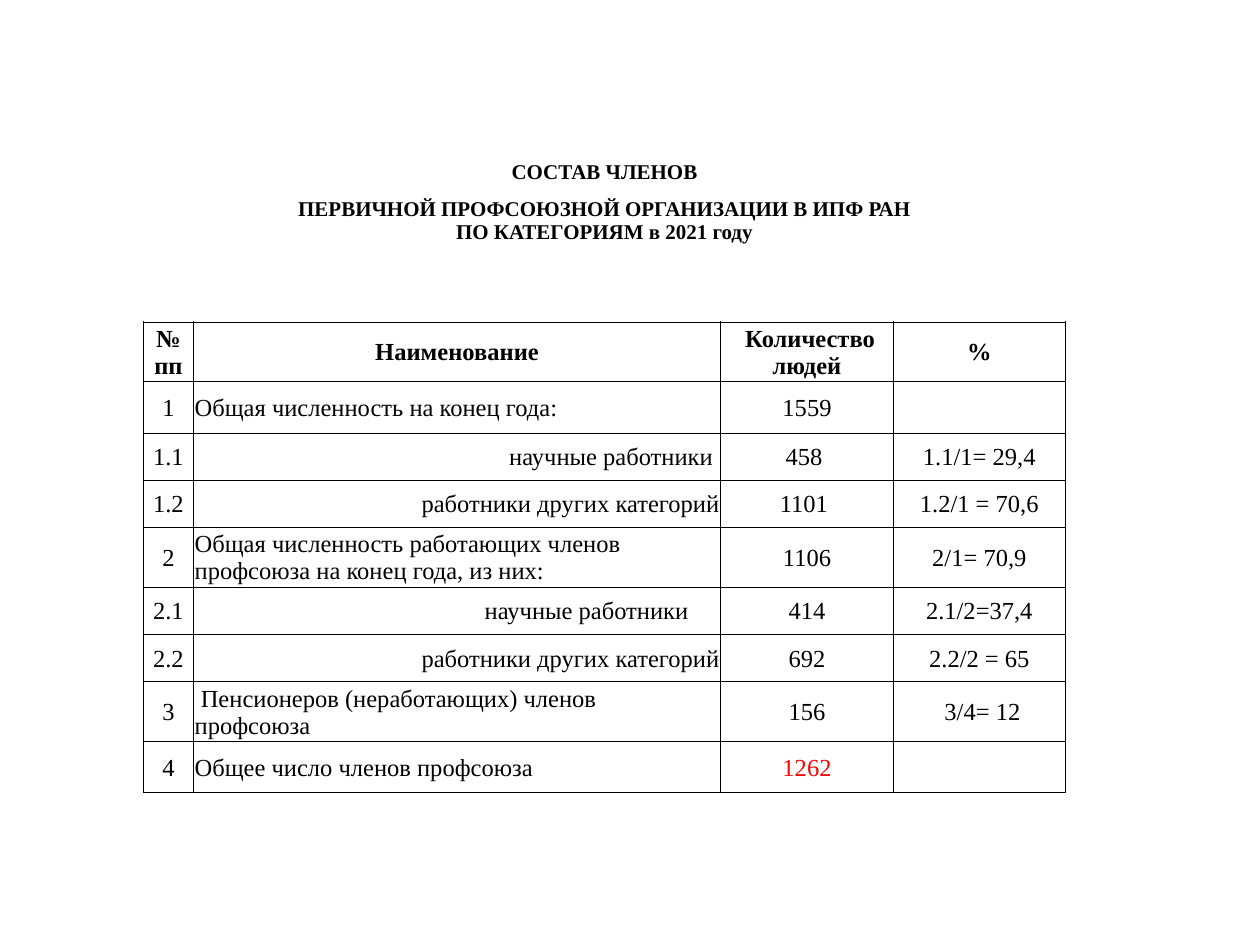
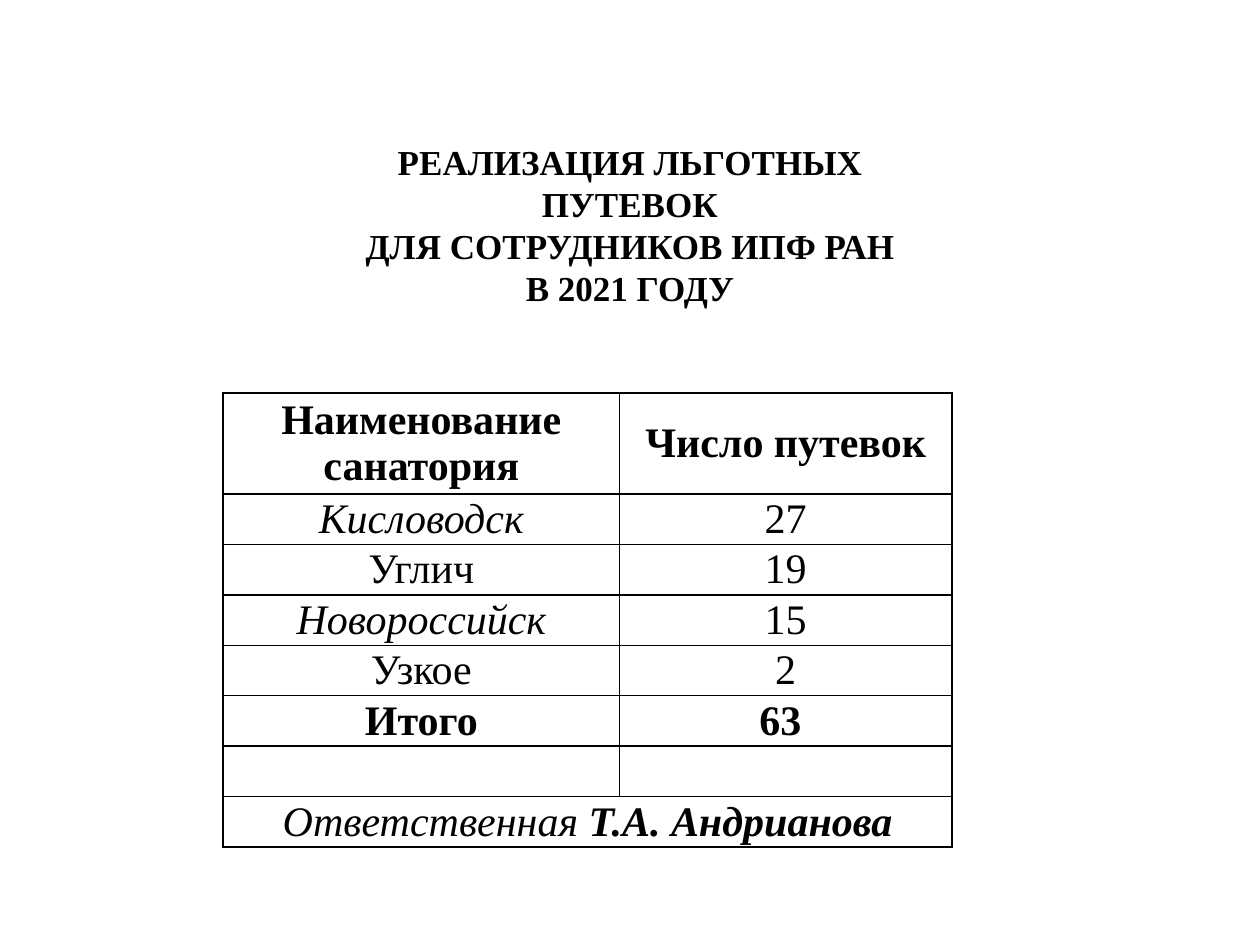
"""Build two slides of trade union tables: membership by category and discounted vouchers."""
from lxml import etree
from pptx import Presentation
from pptx.dml.color import RGBColor
from pptx.enum import text
from pptx.oxml.ns import qn
from pptx.util import Pt

FONT = "Times New Roman"
BLACK = RGBColor(0, 0, 0)
RED = RGBColor(255, 0, 0)
LEFT, CENTER, RIGHT = text.PP_ALIGN.LEFT, text.PP_ALIGN.CENTER, text.PP_ALIGN.RIGHT
MIDDLE, BOTTOM = text.MSO_ANCHOR.MIDDLE, text.MSO_ANCHOR.BOTTOM

MEMBERS_TITLE = [
    "СОСТАВ ЧЛЕНОВ",
    "ПЕРВИЧНОЙ ПРОФСОЮЗНОЙ ОРГАНИЗАЦИИ В ИПФ РАН\nПО КАТЕГОРИЯМ в 2021 году",
]
MEMBERS_HEADER = ("№\nпп", "Наименование", " Количество людей", "%")
MEMBERS = [
    ("1", "Общая численность на конец года:", "1559", ""),
    ("1.1", "научные работники", "458 ", "1.1/1= 29,4"),
    ("1.2", "работники других категорий", "1101 ", "1.2/1 = 70,6"),
    ("2", "Общая численность работающих членов профсоюза на конец года, из них:",
     "1106", "2/1= 70,9"),
    ("2.1", "научные работники", "414", "2.1/2=37,4"),
    ("2.2", "работники других категорий", "692", "2.2/2 = 65"),
    ("3", " Пенсионеров (неработающих) членов\vпрофсоюза", "156", " 3/4= 12"),
    ("4", "Общее число членов профсоюза", "1262", ""),
]
MEMBERS_COLUMNS = (28.5, 54.5, 49, 49, 149, 98.5, 98.5)
FIELD_SPANS = ((0, 0), (1, 4), (5, 5), (6, 6))
TITLE_ROWS = (39, 34.5, 44.5)
TALL_ROW, LOW_ROW = 34.25, 27
NAME_RIGHT_MARGINS = {"1.1": 4.5, "2.1": 18.5}

VOUCHERS_TITLE = "РЕАЛИЗАЦИЯ ЛЬГОТНЫХ ПУТЕВОК\nДЛЯ СОТРУДНИКОВ ИПФ РАН\nВ 2021 ГОДУ"
VOUCHERS_HEADER = ("Наименование\vсанатория", "Число путевок")
VOUCHERS = [("Кисловодск", "27"), ("Углич", "19"), ("Новороссийск", "15"), ("Узкое", "2")]
ITALIC_RESORTS = {"Кисловодск", "Новороссийск"}
VOUCHERS_TOTAL = ("Итого", "63 ")
RESPONSIBLE = ("Ответственная ", "Т.А. Андрианова")
VOUCHERS_COLUMNS = (226.5, 190)
VOUCHERS_ROWS = [57.75] + [28.85] * 7


def format_text(frame, size, bold=False, italic=False, color=BLACK, align=CENTER):
    for paragraph in frame.paragraphs:
        paragraph.alignment = align
        for run in paragraph.runs:
            font = run.font
            font.name, font.size = FONT, Pt(size)
            font.bold, font.italic = bold, italic
            font.color.rgb = color


def set_borders(cell, width):
    properties = cell._tc.get_or_add_tcPr()
    for side in ("a:lnL", "a:lnR", "a:lnT", "a:lnB"):
        line = etree.SubElement(properties, qn(side), w=str(Pt(width)))
        if width:
            fill = etree.SubElement(line, qn("a:solidFill"))
            etree.SubElement(fill, qn("a:srgbClr"), val=str(BLACK))
        else:
            etree.SubElement(line, qn("a:noFill"))


def add_grid(slide, left, top, columns, rows, border, borderless_rows=0):
    shape = slide.shapes.add_table(len(rows), len(columns), Pt(left), Pt(top),
                                   Pt(sum(columns)), Pt(sum(rows)))
    table = shape.table
    table.first_row = table.horz_banding = False
    for column, width in zip(table.columns, columns):
        column.width = Pt(width)
    for index, (row, height) in enumerate(zip(table.rows, rows)):
        row.height = Pt(height)
        for cell in row.cells:
            set_borders(cell, border if index >= borderless_rows else 0)
            cell.fill.background()
    return table


def fill_cell(cell, content, size, side_margin, top_margin=0, anchor=MIDDLE, **style):
    if not content:
        return
    cell.margin_left = cell.margin_right = Pt(side_margin)
    cell.margin_top, cell.margin_bottom = Pt(top_margin), Pt(0)
    cell.vertical_anchor = anchor
    cell.text_frame.text = content
    format_text(cell.text_frame, size, **style)


def name_alignment(number):
    return RIGHT if "." in number else LEFT


def add_members_slide(presentation):
    slide = presentation.slides.add_slide(presentation.slide_layouts[6])
    tall_names = {"2", "3"}
    body_rows = [TALL_ROW if record[0] in tall_names else LOW_ROW for record in MEMBERS]
    table = add_grid(slide, 82, 66, MEMBERS_COLUMNS, [*TITLE_ROWS, TALL_ROW, *body_rows],
                     0.5, len(TITLE_ROWS))
    for row, title in enumerate(MEMBERS_TITLE):
        table.cell(row, 0).merge(table.cell(row, len(MEMBERS_COLUMNS) - 1))
        fill_cell(table.cell(row, 0), title, 12, 0.75, 0.75, BOTTOM, bold=True)
    for row, record in enumerate([MEMBERS_HEADER, *MEMBERS], len(TITLE_ROWS)):
        header = record is MEMBERS_HEADER
        for field, ((first, last), content) in enumerate(zip(FIELD_SPANS, record)):
            cell = table.cell(row, first)
            if last > first:
                cell.merge(table.cell(row, last))
            is_name = field == 1 and not header
            is_total = field == 2 and record is MEMBERS[-1]
            fill_cell(cell, content, 14, 0.75, 0.75, bold=header,
                      color=RED if is_total else BLACK,
                      align=name_alignment(record[0]) if is_name else CENTER)
            if is_name:
                cell.margin_right = Pt(NAME_RIGHT_MARGINS.get(record[0], 0.75))


def add_vouchers_slide(presentation):
    slide = presentation.slides.add_slide(presentation.slide_layouts[6])
    title = slide.shapes.add_textbox(Pt(180), Pt(77), Pt(360), Pt(128)).text_frame
    title.word_wrap = True
    title.text = VOUCHERS_TITLE
    format_text(title, 20, bold=True)

    table = add_grid(slide, 127.5, 224.5, VOUCHERS_COLUMNS, VOUCHERS_ROWS, 1)
    for row, record in enumerate([VOUCHERS_HEADER, *VOUCHERS, VOUCHERS_TOTAL]):
        for column, content in enumerate(record):
            fill_cell(table.cell(row, column), content, 24, 5,
                      bold=record in (VOUCHERS_HEADER, VOUCHERS_TOTAL),
                      italic=content in ITALIC_RESORTS)

    last_row = len(VOUCHERS_ROWS) - 1
    signature = table.cell(last_row, 0)
    signature.merge(table.cell(last_row, 1))
    role, person = RESPONSIBLE
    fill_cell(signature, role, 24, 5)
    paragraph = signature.text_frame.paragraphs[0]
    paragraph.add_run().text = person
    format_text(signature.text_frame, 24, italic=True)
    paragraph.runs[1].font.bold = True


def main():
    presentation = Presentation()
    presentation.slide_width, presentation.slide_height = Pt(720), Pt(540)
    add_members_slide(presentation)
    add_vouchers_slide(presentation)
    presentation.save("out.pptx")


if __name__ == "__main__":
    main()
